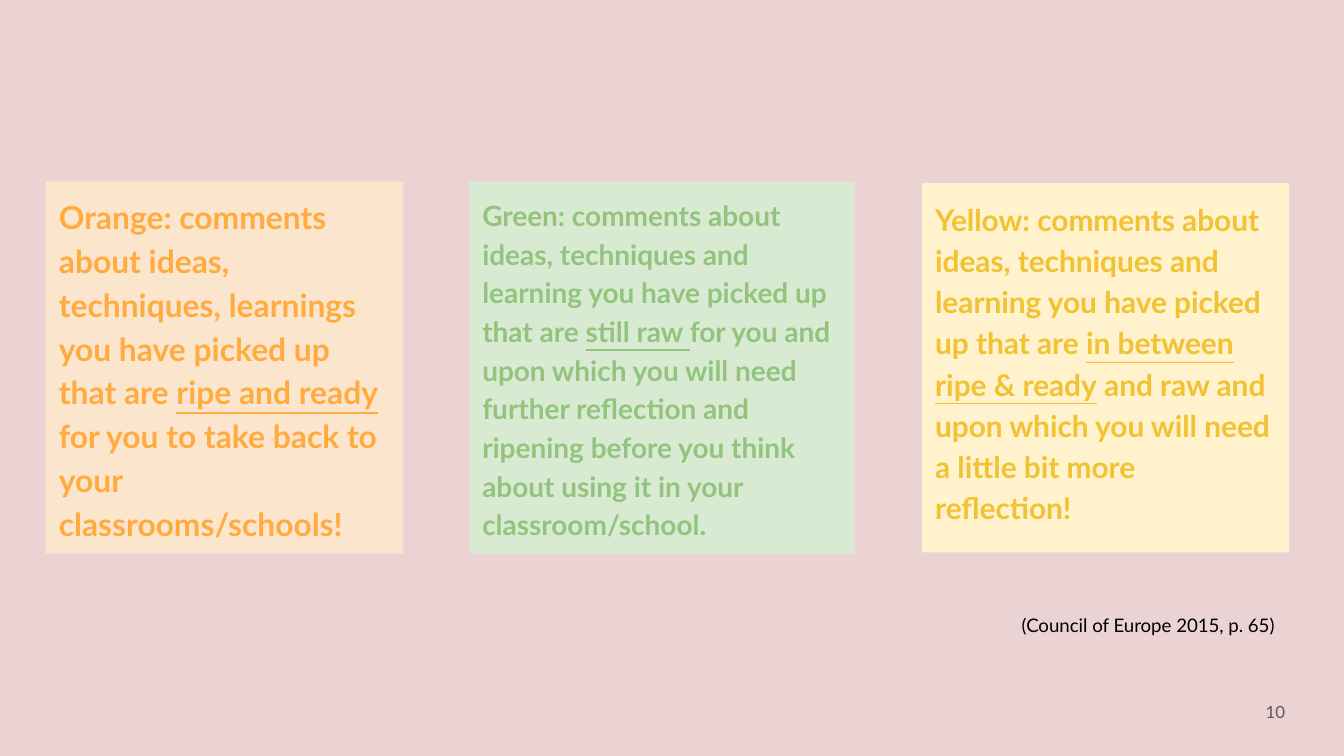
from pptx import Presentation
from pptx import util as u
from pptx.dml.color import RGBColor
from pptx.enum import shapes, text

FONT = "Lato"
BACKGROUND = "EBD3D3"
MIDDLE = text.MSO_ANCHOR.MIDDLE
TOP = text.MSO_ANCHOR.TOP

CARDS = [
    {
        "box": (0.34, 1.35, 2.66, 2.77), "fill": "FCE5CD", "color": "FFAB40",
        "size": 17, "anchor": MIDDLE,
        "runs": [
            ("Orange: comments about ideas, techniques, learnings you have picked up that are ", False),
            ("ripe and ready", True),
            (" for you to take back to your classrooms/schools!", False),
        ],
    },
    {
        "box": (6.86, 1.36, 2.73, 2.75), "fill": "FFF2CC", "color": "F1C232",
        "size": 16, "anchor": TOP,
        "runs": [
            ("Yellow: comments about ideas, techniques and learning you have picked up that are ", False),
            ("in between ripe & ready", True),
            (" and raw and upon which you will need a little bit more reflection!", False),
        ],
    },
    {
        "box": (3.49, 1.35, 2.87, 2.77), "fill": "D9EAD3", "color": "93C47D",
        "size": 15, "anchor": MIDDLE,
        "runs": [
            ("Green: comments about ideas, techniques and learning you have picked up that are ", False),
            ("still raw ", True),
            ("for you and upon which you will need further reflection and ripening "
             "before you think about using it in your classroom/school.", False),
        ],
    },
]

CITATION = {"box": (0.34, 4.41, 9.24, 0.45), "text": "(Council of Europe 2015, p. 65)",
            "size": 10, "color": "000000", "spacing": 1.15}
PAGE_NUMBER = {"box": (9.06, 5.08, 0.6, 0.43), "text": "10",
               "size": 9, "color": "595959", "spacing": 1}


def rgb(value):
    return RGBColor.from_string(value)


def inches(box):
    return [u.Inches(length) for length in box]


def write(shape, runs, size, color, bold, anchor, align, spacing):
    frame = shape.text_frame
    frame.word_wrap = True
    frame.vertical_anchor = anchor
    frame.margin_left = frame.margin_right = u.Inches(0.1)
    frame.margin_top = frame.margin_bottom = u.Inches(0.1)
    paragraph = frame.paragraphs[0]
    paragraph.alignment = align
    paragraph.line_spacing = spacing
    for words, underlined in runs:
        run = paragraph.add_run()
        run.text = words
        run.font.name = FONT
        run.font.size = u.Pt(size)
        run.font.bold = bold
        run.font.underline = underlined
        run.font.color.rgb = rgb(color)


def add_card(slide, card):
    shape = slide.shapes.add_shape(shapes.MSO_SHAPE.RECTANGLE, *inches(card["box"]))
    shape.shadow.inherit = False
    shape.fill.solid()
    shape.fill.fore_color.rgb = rgb(card["fill"])
    shape.line.fill.background()
    write(shape, card["runs"], card["size"], card["color"], True,
          card["anchor"], text.PP_ALIGN.LEFT, 1.15)


def add_note(slide, note):
    shape = slide.shapes.add_textbox(*inches(note["box"]))
    write(shape, [(note["text"], False)], note["size"], note["color"], False,
          MIDDLE, text.PP_ALIGN.RIGHT, note["spacing"])


def main():
    presentation = Presentation()
    presentation.slide_width = u.Inches(10)
    presentation.slide_height = presentation.slide_width * 9 // 16
    slide = presentation.slides.add_slide(presentation.slide_layouts[6])
    slide.background.fill.solid()
    slide.background.fill.fore_color.rgb = rgb(BACKGROUND)
    for card in CARDS:
        add_card(slide, card)
    for note in (CITATION, PAGE_NUMBER):
        add_note(slide, note)
    presentation.save("out.pptx")


if __name__ == "__main__":
    main()
